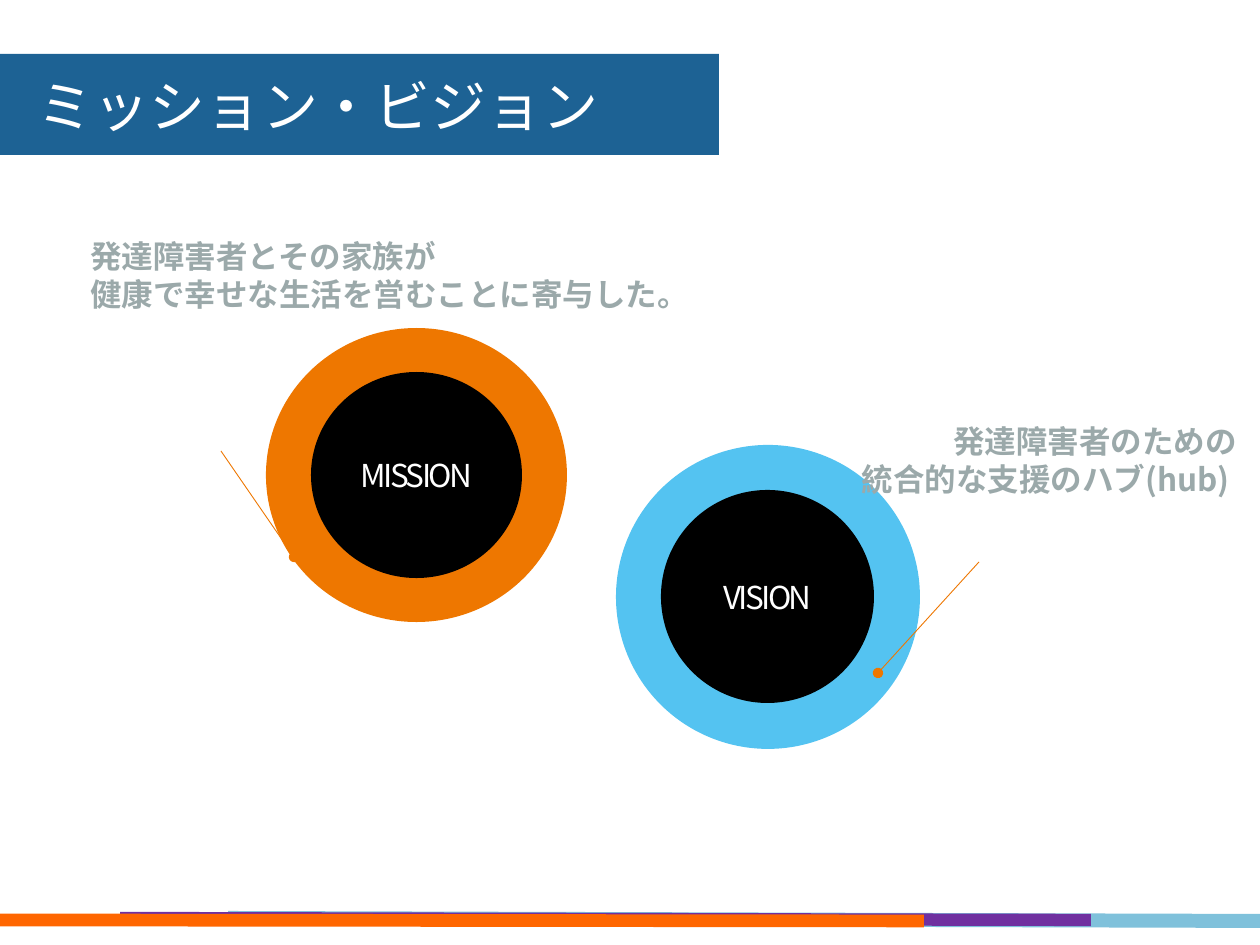
from lxml import etree
from pptx import Presentation
from pptx.dml.color import RGBColor
from pptx.enum.shapes import MSO_CONNECTOR, MSO_SHAPE
from pptx.enum.text import MSO_ANCHOR, PP_ALIGN
from pptx.oxml.ns import qn
from pptx.util import Pt

PX = 914400 // 126
JP, KR = "Noto Sans CJK JP", "Noto Sans CJK KR"
ORANGE, BLACK, WHITE, GREY = "EE7700", "000000", "FFFFFF", "9BA9AA"

deck = Presentation()
deck.slide_width, deck.slide_height = 1260 * PX, 945 * PX
page = deck.slides.add_slide(deck.slide_layouts[6])


def paint(target, color):
    """Give a fill or a line one solid colour."""
    fill = getattr(target, "fill", target)
    fill.solid()
    fill.fore_color.rgb = RGBColor.from_string(color)


def write(shape, text, size, font, color, align, bold=False):
    frame = shape.text_frame
    frame.word_wrap = True
    frame.text = text
    for para in frame.paragraphs:
        para.alignment = align
        for span in para.runs:
            span.font.size = Pt(size)
            span.font.bold = bold
            span.font.name = font
            paint(span.font, color)
            props = span.font._element
            etree.SubElement(props, qn("a:ea")).set("typeface", font)
    return frame


# Rings: outer disc, then a black disc with its label
rings = [
    ("MISSION", ORANGE, (266, 328, 301, 294), (311, 372, 211, 206)),
    ("VISION", "54C3F1", (616, 445, 304, 304), (661, 490, 213, 213)),
]
for label, color, outer, inner in rings:
    for place, fill in ((outer, color), (inner, BLACK)):
        disc = page.shapes.add_shape(MSO_SHAPE.OVAL, *(n * PX for n in place))
        disc.shadow.inherit = False
        paint(disc.fill, fill)
        disc.line.fill.background()
    frame = write(disc, label, 18, KR, WHITE, PP_ALIGN.CENTER)
    frame.vertical_anchor = MSO_ANCHOR.MIDDLE
    frame.paragraphs[0].runs[0].font._element.set("spc", "-150")

# Statements beside the rings
statements = [
    ("発達障害者とその家族が\n健康で幸せな生活を営むことに寄与した。",
     (78, 231, 672, 89), PP_ALIGN.LEFT),
    ("発達障害者のための\n統合的な支援のハブ(hub) ",
     (745, 416, 504, 89), PP_ALIGN.RIGHT),
]
for text, place, align in statements:
    box = page.shapes.add_textbox(*(n * PX for n in place))
    write(box, text, 18, JP, GREY, align, bold=True)

# Title banner
banner = page.shapes.add_shape(MSO_SHAPE.RECTANGLE, 0, 54 * PX, 719 * PX, 101 * PX)
banner.shadow.inherit = False
paint(banner.fill, "1D6294")
banner.line.fill.background()
frame = write(banner, "ミッション・ビジョン", 32, JP, WHITE, PP_ALIGN.LEFT)
frame.vertical_anchor = MSO_ANCHOR.TOP
frame.margin_left = 38 * PX
frame.margin_top = frame.margin_bottom = 15 * PX
frame.paragraphs[0].line_spacing = Pt(40)

# Pointers from the rings, then the footer stripes: start, end, colour, width, dot
lines = [
    ((294, 557), (221, 451), ORANGE, 0.5, True),
    ((878, 673), (979, 562), ORANGE, 0.5, True),
    ((228, 918), (1260, 921), "7FC1DB", 8, False),
    ((120, 918), (1091, 920), "7030A0", 7, False),
    ((0, 920), (924, 921), "FF6600", 7.25, False),
]
for start, end, color, width, dotted in lines:
    line = page.shapes.add_connector(
        MSO_CONNECTOR.STRAIGHT, *(n * PX for n in start + end))
    line.line.width = Pt(width)
    paint(line.line, color)
    if dotted:
        etree.SubElement(line.line._get_or_add_ln(), qn("a:headEnd")).set("type", "oval")
    etree.SubElement(line._element.spPr, qn("a:effectLst"))

deck.save("out.pptx")
